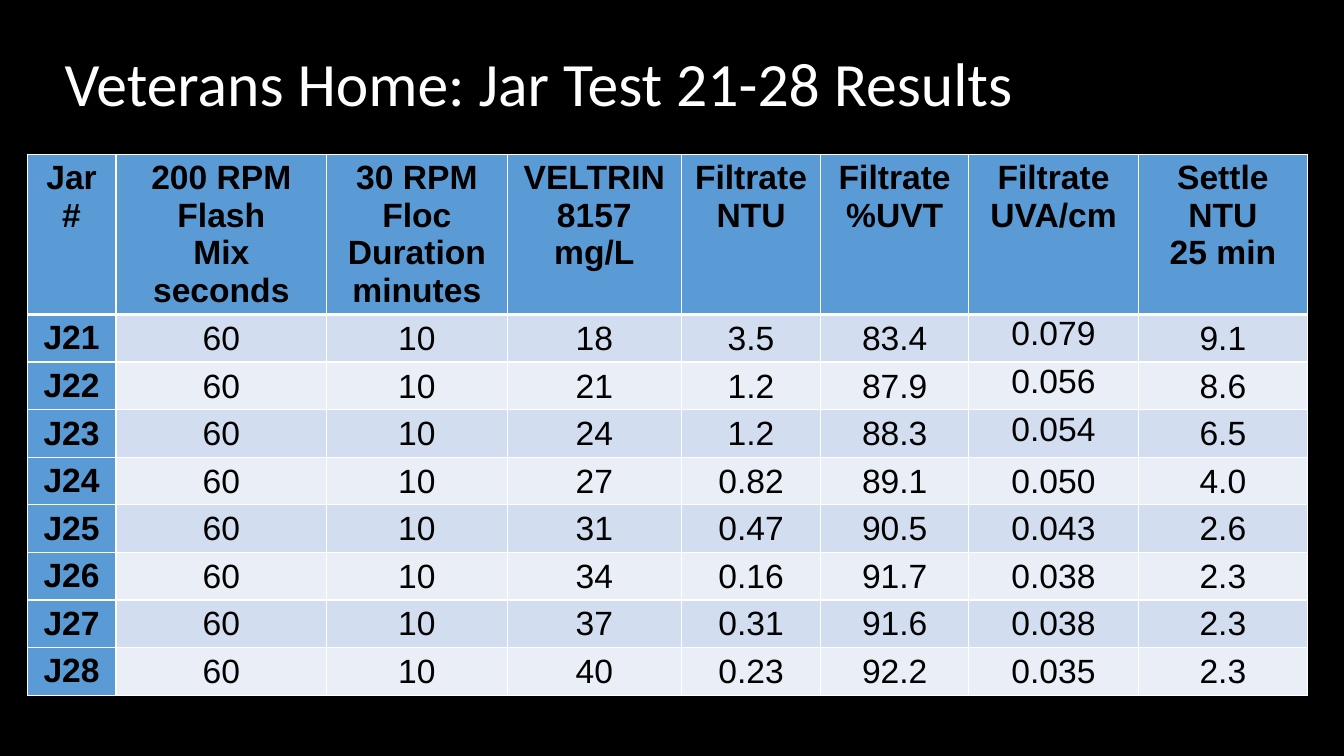
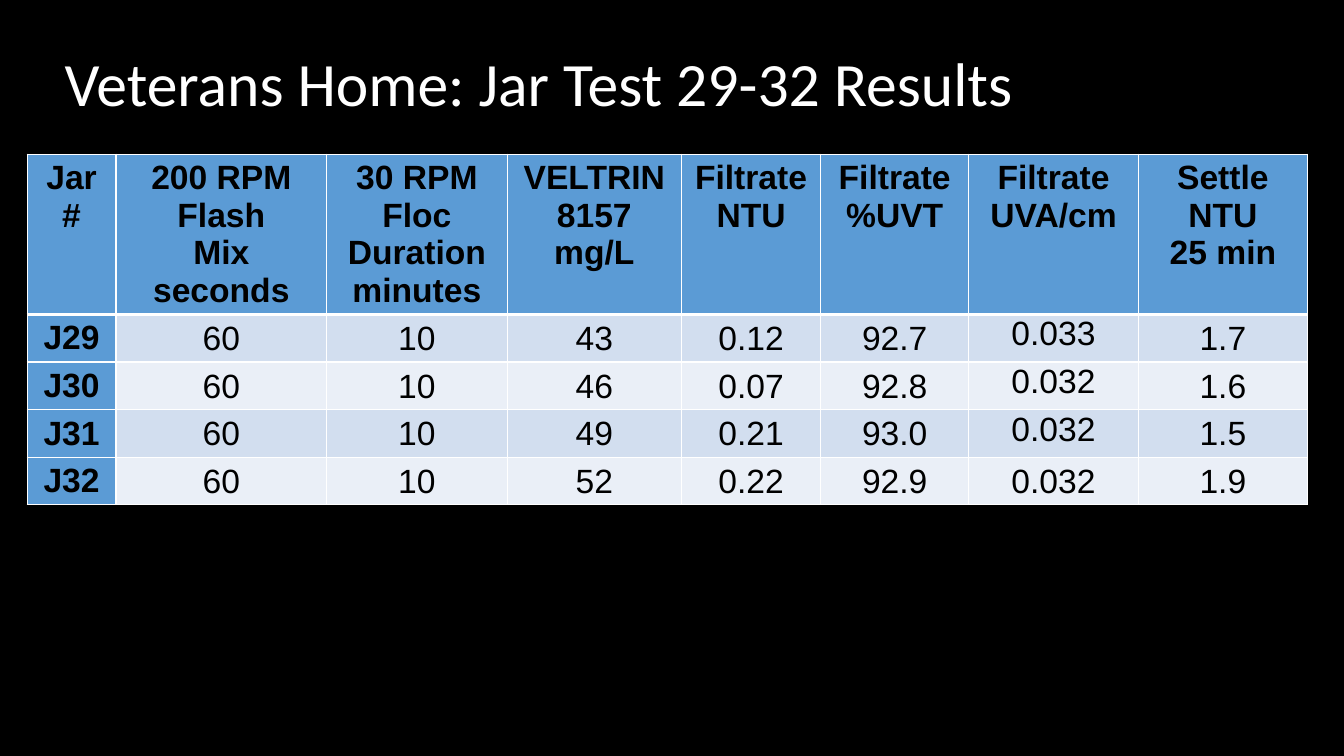
from lxml.etree import SubElement as Sub
from pptx import Presentation
from pptx.dml.color import RGBColor as RGB
from pptx.enum.text import MSO_ANCHOR as Anchor, PP_ALIGN as Align
from pptx.oxml.ns import qn
from pptx.util import Inches, Pt

BLACK = RGB(0x00, 0x00, 0x00)
WHITE = RGB(0xFF, 0xFF, 0xFF)
BLUE = RGB(0x5B, 0x9B, 0xD5)
BANDS = (RGB(0xD2, 0xDE, 0xEF), RGB(0xEA, 0xEF, 0xF7))

WIDTHS = (0.88, 2.09, 1.79, 1.73, 1.38, 1.47, 1.68, 1.68)
HEAD_H, ROW_H = 1.59, 0.47
UVA_COL, TOP_ROWS = 6, 3

HEADS = (
    "Jar\n#", "200 RPM\nFlash\nMix\nseconds", "30 RPM\nFloc\nDuration\nminutes",
    "VELTRIN 8157\nmg/L", "Filtrate\nNTU", "Filtrate\n%UVT",
    "Filtrate\nUVA/cm", "Settle\nNTU\n25 min",
)
FIRST = (
    ("J21", "60", "10", "18", "3.5", "83.4", "0.079", "9.1"),
    ("J22", "60", "10", "21", "1.2", "87.9", "0.056", "8.6"),
    ("J23", "60", "10", "24", "1.2", "88.3", "0.054", "6.5"),
    ("J24", "60", "10", "27", "0.82", "89.1", "0.050", "4.0"),
    ("J25", "60", "10", "31", "0.47", "90.5", "0.043", "2.6"),
    ("J26", "60", "10", "34", "0.16", "91.7", "0.038", "2.3"),
    ("J27", "60", "10", "37", "0.31", "91.6", "0.038", "2.3"),
    ("J28", "60", "10", "40", "0.23", "92.2", "0.035", "2.3"),
)
SECOND = (
    ("J29", "60", "10", "43", "0.12", "92.7", "0.033", "1.7"),
    ("J30", "60", "10", "46", "0.07", "92.8", "0.032", "1.6"),
    ("J31", "60", "10", "49", "0.21", "93.0", "0.032", "1.5"),
    ("J32", "60", "10", "52", "0.22", "92.9", "0.032", "1.9"),
)


def add_run(para, text, font, size, color, bold=False):
    run = para.add_run()
    run.text = text
    run.font.name = font
    run.font.size = Pt(size)
    run.font.color.rgb = color
    run.font.bold = bold


def set_title(slide, text):
    title = slide.shapes.title
    title.left, title.top = Inches(0.54), Inches(0.13)
    title.width, title.height = Inches(11.88), Inches(1.45)
    title.text_frame.vertical_anchor = Anchor.MIDDLE
    para = title.text_frame.paragraphs[0]
    para.alignment = Align.LEFT
    para.line_spacing = 0.9
    add_run(para, text, "Calibri", 44, WHITE)


def set_edges(cell, top, base):
    props = cell._tc.get_or_add_tcPr()
    for side, width in (("L", 1), ("R", 1), ("T", top), ("B", base)):
        line = Sub(props, qn(f"a:ln{side}"), w=str(Pt(width)))
        fill = Sub(line, qn("a:solidFill"))
        Sub(fill, qn("a:srgbClr"), val=str(WHITE))


def fill_cell(cell, text, row, col):
    label = row == 0 or col == 0
    set_edges(cell, 3 if row == 1 else 1, 3 if row == 0 else 1)
    cell.fill.solid()
    cell.fill.fore_color.rgb = BLUE if label else BANDS[(row - 1) % 2]
    if not label:
        cell.margin_left = cell.margin_right = cell.margin_top = Inches(0.01)
        cell.margin_bottom = 0
        if col != UVA_COL or row > TOP_ROWS:
            cell.vertical_anchor = Anchor.MIDDLE
    frame = cell.text_frame
    for i, line in enumerate(text.split("\n")):
        para = frame.add_paragraph() if i else frame.paragraphs[0]
        para.alignment = Align.CENTER
        add_run(para, line, "Arial", 24, BLACK, label)


def add_grid(slide, data):
    rows = (HEADS, *data)
    height = HEAD_H + ROW_H * len(data)
    table = slide.shapes.add_table(
        len(rows), len(WIDTHS), Inches(0.27), Inches(1.53),
        Inches(sum(WIDTHS)), Inches(height)).table
    table.first_col = True
    for col, width in zip(table.columns, WIDTHS):
        col.width = Inches(width)
    for r, texts in enumerate(rows):
        table.rows[r].height = Inches(ROW_H if r else HEAD_H)
        for c, text in enumerate(texts):
            fill_cell(table.cell(r, c), text, r, c)


def main():
    deck = Presentation()
    deck.slide_width, deck.slide_height = Inches(13.33), Inches(7.5)
    back = deck.slide_master.background.fill
    back.solid()
    back.fore_color.rgb = BLACK
    for span, data in (("21-28", FIRST), ("29-32", SECOND)):
        slide = deck.slides.add_slide(deck.slide_layouts[5])
        set_title(slide, f"Veterans Home: Jar Test {span} Results")
        add_grid(slide, data)
    deck.save("out.pptx")


if __name__ == "__main__":
    main()
